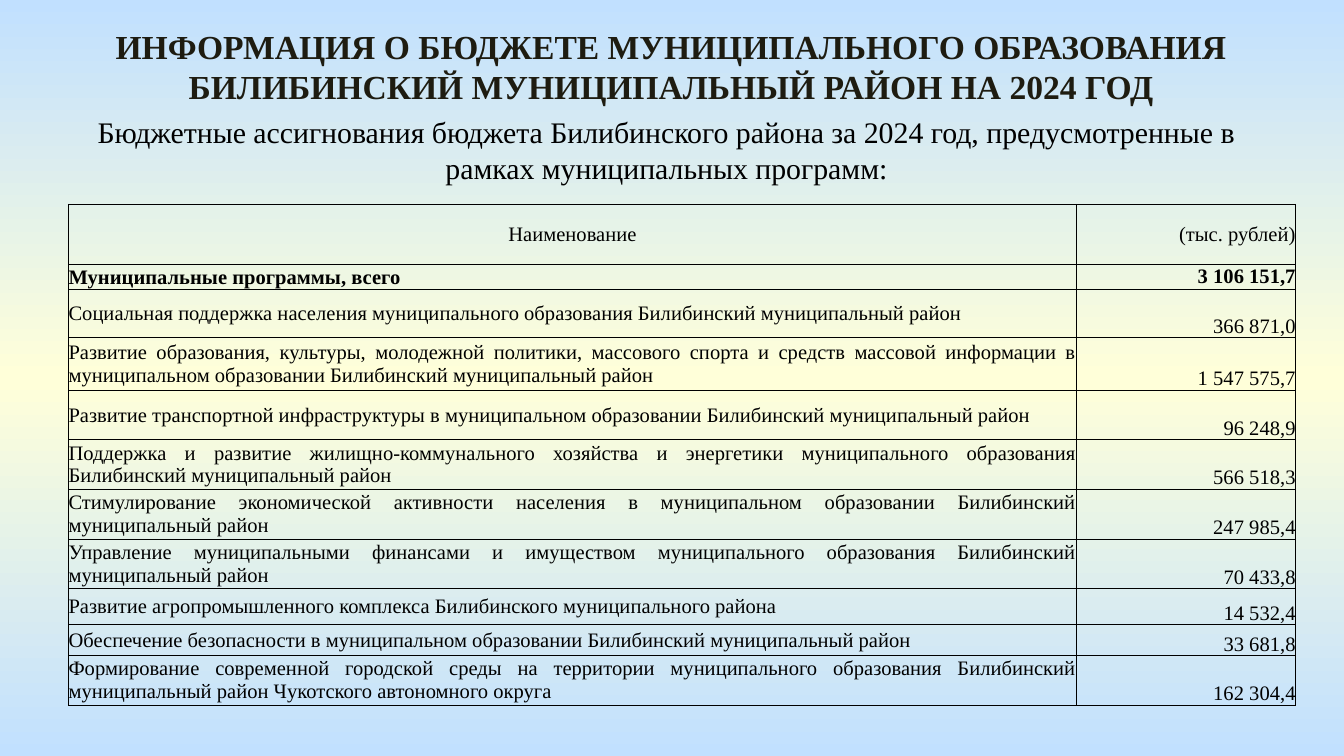
from dataclasses import dataclass

from pptx import Presentation
from pptx.dml.color import RGBColor
from pptx.enum.text import MSO_ANCHOR, MSO_AUTO_SIZE, PP_ALIGN
from pptx.oxml import parse_xml
from pptx.oxml.ns import nsdecls, qn
from pptx.util import Inches, Pt

LEFT, CENTER, RIGHT, JUSTIFY = PP_ALIGN.LEFT, PP_ALIGN.CENTER, PP_ALIGN.RIGHT, PP_ALIGN.JUSTIFY
TOP, MIDDLE, BOTTOM = MSO_ANCHOR.TOP, MSO_ANCHOR.MIDDLE, MSO_ANCHOR.BOTTOM
BLANK_LAYOUT = 6


@dataclass(frozen=True)
class Theme:
    font: str = "Times New Roman"
    title_color: str = "1E1C11"
    text_color: str = "000000"
    border_color: str = "000000"
    background_edge: str = "C1E0FF"
    background_middle: str = "FFFFD9"
    title_size: int = 18
    subtitle_size: int = 16
    table_size: int = 11
    border_width: float = 0.5


THEME = Theme()

TITLE = ("ИНФОРМАЦИЯ О БЮДЖЕТЕ МУНИЦИПАЛЬНОГО ОБРАЗОВАНИЯ "
         "БИЛИБИНСКИЙ МУНИЦИПАЛЬНЫЙ РАЙОН НА 2024 ГОД")
SUBTITLE = ("Бюджетные ассигнования бюджета Билибинского района за 2024 год, "
            "предусмотренные в рамках муниципальных программ:")
HEADER = ("Наименование", "(тыс. рублей)")
TOTAL = ("Муниципальные программы, всего", "3 106 151,7")
PROGRAMS = [
    ("Социальная поддержка населения муниципального образования "
     "Билибинский муниципальный район", "366 871,0"),
    ("Развитие образования, культуры, молодежной политики, массового спорта и средств "
     "массовой информации в муниципальном образовании Билибинский муниципальный район",
     "1 547 575,7"),
    ("Развитие транспортной инфраструктуры в муниципальном образовании "
     "Билибинский муниципальный район", "96 248,9"),
    ("Поддержка и развитие жилищно-коммунального хозяйства и энергетики "
     "муниципального образования Билибинский муниципальный район", "566 518,3"),
    ("Стимулирование экономической активности населения в муниципальном образовании "
     "Билибинский муниципальный район", "247 985,4"),
    ("Управление муниципальными финансами и имуществом муниципального образования "
     "Билибинский муниципальный район", "70 433,8"),
    ("Развитие агропромышленного комплекса Билибинского муниципального района", "14 532,4"),
    ("Обеспечение безопасности в муниципальном образовании "
     "Билибинский муниципальный район", "33 681,8"),
    ("Формирование современной городской среды на территории муниципального образования "
     "Билибинский муниципальный район Чукотского автономного округа", "162 304,4"),
]
COLUMN_WIDTHS = (7.5, 1.63)
ROW_HEIGHTS = (0.45, 0.18, 0.36, 0.39, 0.37, 0.34, 0.37, 0.37, 0.27, 0.23, 0.24)


def set_background(slide):
    """Fill the slide with a vertical gradient that is lightest in the middle."""
    slide.background.fill.solid()
    solid = next(slide.element.iter(qn("a:solidFill")))
    stops = "".join(
        f'<a:gs pos="{position * 1000}"><a:srgbClr val="{color}"/></a:gs>'
        for position, color in ((0, THEME.background_edge),
                                (50, THEME.background_middle),
                                (100, THEME.background_edge)))
    gradient = parse_xml(
        f'<a:gradFill {nsdecls("a")} rotWithShape="1"><a:gsLst>{stops}</a:gsLst>'
        '<a:lin ang="5400000" scaled="0"/></a:gradFill>')
    solid.getparent().replace(solid, gradient)


def write_text(frame, text, size, color, alignment, bold=False):
    paragraph = frame.paragraphs[0]
    paragraph.alignment = alignment
    run = paragraph.add_run()
    run.text = text
    run.font.name = THEME.font
    run.font.size = Pt(size)
    run.font.bold = bold
    run.font.color.rgb = RGBColor.from_string(color)


def add_heading(slide, text, box, size, color, bold=False):
    frame = slide.shapes.add_textbox(*map(Inches, box)).text_frame
    frame.word_wrap = True
    frame.auto_size = MSO_AUTO_SIZE.SHAPE_TO_FIT_TEXT
    write_text(frame, text, size, color, CENTER, bold)


def add_borders(cell):
    properties = cell._tc.get_or_add_tcPr()
    for side in ("lnL", "lnR", "lnT", "lnB"):
        properties.append(parse_xml(
            f'<a:{side} {nsdecls("a")} w="{Pt(THEME.border_width)}"><a:solidFill>'
            f'<a:srgbClr val="{THEME.border_color}"/></a:solidFill></a:{side}>'))


def fill_cell(cell, text, alignment, anchor, bold):
    cell.margin_left = cell.margin_right = cell.margin_top = cell.margin_bottom = 0
    cell.vertical_anchor = anchor
    add_borders(cell)
    cell.fill.background()
    write_text(cell.text_frame, text, THEME.table_size, THEME.text_color, alignment, bold)


def add_budget_table(slide):
    rows = [(HEADER, CENTER, MIDDLE, False), (TOTAL, LEFT, TOP, True)]
    rows += [(program, JUSTIFY, BOTTOM, False) for program in PROGRAMS]
    table = slide.shapes.add_table(
        len(rows), len(COLUMN_WIDTHS), Inches(0.51), Inches(1.52),
        Inches(sum(COLUMN_WIDTHS)), Inches(sum(ROW_HEIGHTS))).table
    table.first_row = table.horz_banding = False
    for column, width in zip(table.columns, COLUMN_WIDTHS):
        column.width = Inches(width)
    for index, ((name, amount), name_alignment, amount_anchor, bold) in enumerate(rows):
        table.rows[index].height = Inches(ROW_HEIGHTS[index])
        fill_cell(table.cell(index, 0), name, name_alignment, MIDDLE, bold)
        fill_cell(table.cell(index, 1), amount, RIGHT, amount_anchor, bold)


def main():
    presentation = Presentation()
    presentation.slide_width = Inches(10)
    presentation.slide_height = presentation.slide_width * 9 // 16
    slide = presentation.slides.add_slide(presentation.slide_layouts[BLANK_LAYOUT])
    set_background(slide)
    add_heading(slide, TITLE, (0.35, 0.14, 9.29, 0.71),
                THEME.title_size, THEME.title_color, bold=True)
    add_heading(slide, SUBTITLE, (0.31, 0.8, 9.3, 0.64),
                THEME.subtitle_size, THEME.text_color)
    add_budget_table(slide)
    presentation.save("out.pptx")


if __name__ == "__main__":
    main()
